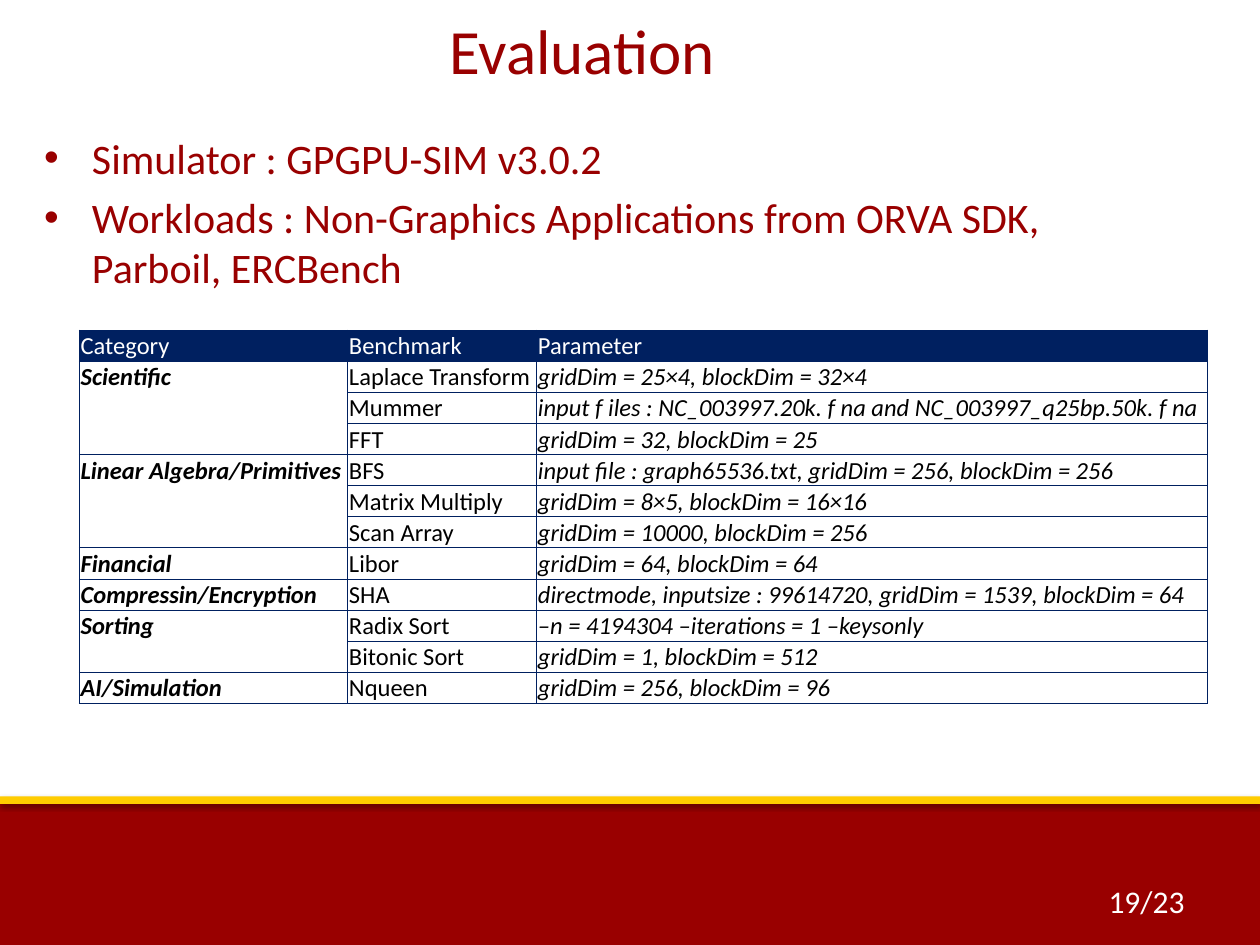
from lxml import etree
from pptx import Presentation
from pptx import util as u
from pptx.dml.color import RGBColor
from pptx.enum import shapes, text
from pptx.oxml import ns

RED = RGBColor(0x99, 0x00, 0x00)
GOLD = RGBColor(0xFF, 0xCC, 0x00)
NAVY = RGBColor(0x00, 0x20, 0x60)
WHITE = RGBColor(0xFF, 0xFF, 0xFF)
BLACK = RGBColor(0x00, 0x00, 0x00)

HEADER = ("Category", "Benchmark", "Parameter")
WORKLOADS = {
    "Scientific": [
        ("Laplace Transform", "gridDim = 25×4, blockDim = 32×4"),
        ("Mummer", "input f iles : NC_003997.20k. f na and NC_003997_q25bp.50k. f na"),
        ("FFT", "gridDim = 32, blockDim = 25"),
    ],
    "Linear Algebra/Primitives": [
        ("BFS", "input file : graph65536.txt, gridDim = 256, blockDim = 256"),
        ("Matrix Multiply", "gridDim = 8×5, blockDim = 16×16"),
        ("Scan Array", "gridDim = 10000, blockDim = 256"),
    ],
    "Financial": [("Libor", "gridDim = 64, blockDim = 64")],
    "Compressin/Encryption": [
        ("SHA", "directmode, inputsize : 99614720, gridDim = 1539, blockDim = 64"),
    ],
    "Sorting": [
        ("Radix Sort", "–n = 4194304 –iterations = 1 –keysonly"),
        ("Bitonic Sort", "gridDim = 1, blockDim = 512"),
    ],
    "AI/Simulation": [("Nqueen", "gridDim = 256, blockDim = 96")],
}


def add_xml(parent, tag, **attributes):
    return etree.SubElement(parent, ns.qn(tag), attributes)


class SlideBuilder:
    font_name = "Calibri"

    def __init__(self, slide):
        self.slide = slide

    def place(self, shape, left, top, width, height):
        shape.left, shape.top = u.Inches(left), u.Inches(top)
        shape.width, shape.height = u.Inches(width), u.Inches(height)

    def style(self, para, size, color, bold=False, italic=False):
        font = para.font
        font.name, font.size = self.font_name, u.Pt(size)
        font.bold, font.italic = bold, italic
        font.color.rgb = color

    def band(self, top, height, color, opacity, distance):
        """Add a full-width bar with a soft shadow below it, behind the placeholders."""
        bar = self.slide.shapes.add_shape(
            shapes.MSO_SHAPE.RECTANGLE, 0, u.Inches(top), u.Inches(10), u.Inches(height))
        bar.fill.solid()
        bar.fill.fore_color.rgb = color
        bar.line.fill.background()
        bar.shadow.inherit = False
        effects = bar._element.spPr.find(ns.qn("a:effectLst"))
        shadow = add_xml(effects, "a:outerShdw", blurRad=str(u.Pt(3.1)),
                         dist=str(u.Pt(distance)), dir="5400000", rotWithShape="0")
        shade = add_xml(shadow, "a:srgbClr", val=str(BLACK))
        add_xml(shade, "a:alpha", val=str(opacity * 1000))
        title = self.slide.shapes.title._element
        title.addprevious(bar._element)

    def title(self, words, *place):
        box = self.slide.shapes.title
        self.place(box, *place)
        frame = box.text_frame
        frame.text = words
        frame.auto_size = text.MSO_AUTO_SIZE.NONE
        frame.vertical_anchor = text.MSO_ANCHOR.TOP
        para = frame.paragraphs[0]
        para.alignment = text.PP_ALIGN.CENTER
        self.style(para, 36, RED)

    def bullets(self, items, *place):
        box = self.slide.placeholders[1]
        self.place(box, *place)
        frame = box.text_frame
        frame.text = "\n".join(items)
        frame.auto_size = text.MSO_AUTO_SIZE.NONE
        for index, para in enumerate(frame.paragraphs):
            properties = para._p.get_or_add_pPr()
            properties.set("marL", str(u.Inches(0.38)))
            properties.set("indent", str(u.Inches(-0.38)))
            add_xml(properties, "a:buFont", typeface="Arial")
            add_xml(properties, "a:buChar", char="•")
            para.space_before = u.Pt(5 if index else 0)
            self.style(para, 24, RED)

    def label(self, words, *place):
        box = self.slide.shapes.add_textbox(*map(u.Inches, place))
        frame = box.text_frame
        frame.word_wrap = True
        frame.vertical_anchor = text.MSO_ANCHOR.MIDDLE
        para = frame.paragraphs[0]
        para.text = words
        para.alignment = text.PP_ALIGN.RIGHT
        self.style(para, 18, WHITE)

    def cell(self, cell, words="", color=BLACK, fill=None, anchor=text.MSO_ANCHOR.BOTTOM,
             bold=False, italic=False):
        cell.margin_left = cell.margin_right = cell.margin_top = u.Inches(0.01)
        cell.margin_bottom = 0
        cell.vertical_anchor = anchor
        para = cell.text_frame.paragraphs[0]
        para.text = words
        self.style(para, 14, color, bold, italic)
        properties = cell._tc.get_or_add_tcPr()
        for side in ("a:lnL", "a:lnR", "a:lnT", "a:lnB"):
            line = add_xml(properties, side, w=str(u.Pt(0.5)))
            add_xml(add_xml(line, "a:solidFill"), "a:srgbClr", val=str(NAVY))
        if fill is None:
            cell.fill.background()
        else:
            cell.fill.solid()
            cell.fill.fore_color.rgb = fill

    def workload_table(self, header, groups, left, top, widths, row_height):
        """Add the table; each category cell spans the rows of its benchmarks."""
        row_count = 1 + sum(map(len, groups.values()))
        table = self.slide.shapes.add_table(
            row_count, len(header), u.Inches(left), u.Inches(top),
            u.Inches(sum(widths)), u.Inches(row_height * row_count)).table
        table.first_row = table.horz_banding = False
        for column, width in zip(table.columns, widths):
            column.width = u.Inches(width)
        for column, words in enumerate(header):
            self.cell(table.cell(0, column), words, WHITE, NAVY)
        row = 1
        for category, benchmarks in groups.items():
            last = row + len(benchmarks) - 1
            anchor = text.MSO_ANCHOR.BOTTOM
            if last > row:
                table.cell(row, 0).merge(table.cell(last, 0))
                anchor = text.MSO_ANCHOR.TOP
            for offset, (benchmark, parameter) in enumerate(benchmarks):
                self.cell(table.cell(row + offset, 0), "" if offset else category,
                          anchor=anchor, bold=True, italic=True)
                self.cell(table.cell(row + offset, 1), benchmark)
                self.cell(table.cell(row + offset, 2), parameter, italic=True)
            row = last + 1


def main():
    deck = Presentation()
    deck.slide_width, deck.slide_height = u.Inches(10), u.Inches(7.5)
    page = SlideBuilder(deck.slides.add_slide(deck.slide_layouts[1]))
    page.band(6.35, 1.15, RED, opacity=35, distance=1.8)
    page.band(6.32, 0.06, GOLD, opacity=38, distance=1.6)
    page.title("Evaluation", 0.17, 0.04, 8.9, 0.83)
    page.bullets(["Simulator : GPGPU-SIM v3.0.2",
                  "Workloads : Non-Graphics Applications from ORVA SDK, Parboil, ERCBench"],
                 0.25, 1, 9.04, 5.92)
    page.workload_table(HEADER, WORKLOADS, 0.63, 2.62, (2.13, 1.5, 5.32), 0.24)
    page.label("19/23", 7.17, 6.95, 2.33, 0.4)
    deck.save("out.pptx")


if __name__ == "__main__":
    main()
